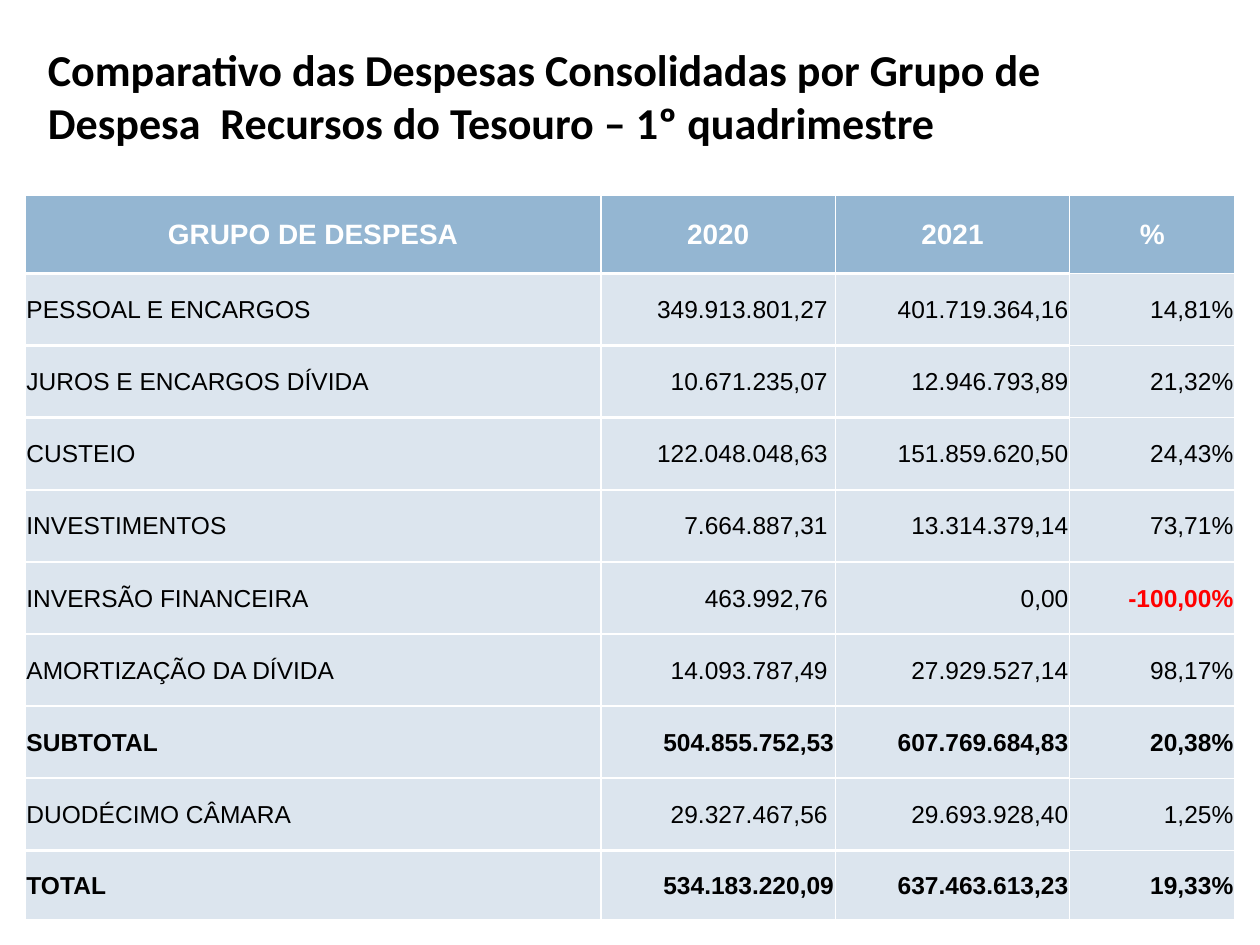
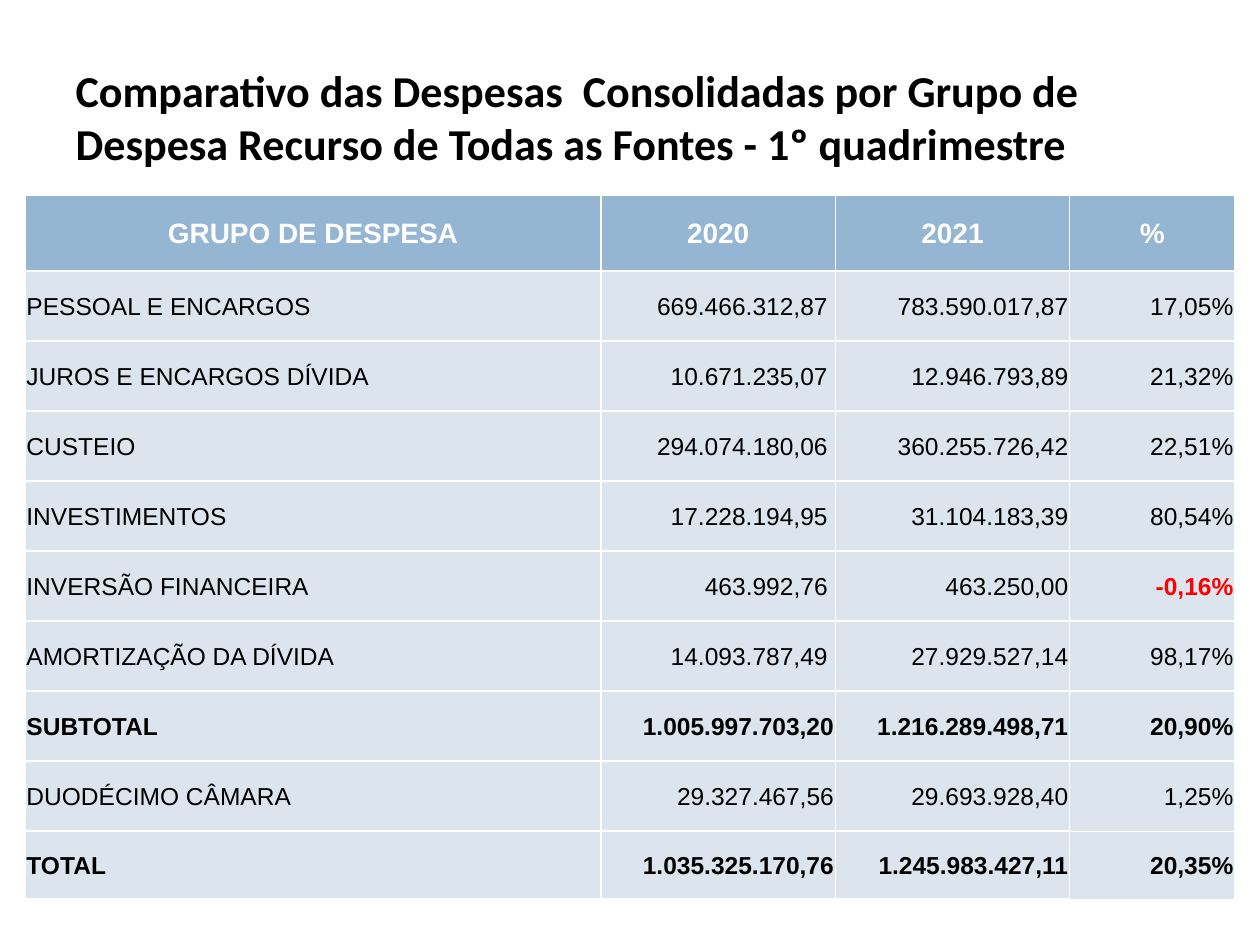
from lxml.etree import SubElement
from pptx import Presentation
from pptx.dml.color import RGBColor
from pptx.enum.text import MSO_ANCHOR, MSO_AUTO_SIZE, PP_ALIGN
from pptx.oxml.ns import qn
from pptx.util import Inches, Pt

BLACK = RGBColor(0x00, 0x00, 0x00)
WHITE = RGBColor(0xFF, 0xFF, 0xFF)
RED = RGBColor(0xFF, 0x00, 0x00)
HEADER_BLUE = RGBColor(0x94, 0xB6, 0xD2)
ROW_BLUE = RGBColor(0xDC, 0xE5, 0xEE)

TITLE_FONT = "Calibri"
TABLE_FONT = "Arial"
HEADINGS = ("GRUPO DE DESPESA", "2020", "2021", "%")
COLUMN_WIDTHS = (4.57, 1.86, 1.86, 1.31)
TOTAL_ROWS = {"SUBTOTAL", "TOTAL"}
CELL_MARGIN = 0.01
INDENTED_MARGIN = 0.06

TREASURY_ROWS = (
    ("PESSOAL E ENCARGOS", "349.913.801,27", "401.719.364,16", "14,81%"),
    ("JUROS E ENCARGOS DÍVIDA", "10.671.235,07", "12.946.793,89", "21,32%"),
    ("CUSTEIO", "122.048.048,63", "151.859.620,50", "24,43%"),
    ("INVESTIMENTOS", "7.664.887,31", "13.314.379,14", "73,71%"),
    ("INVERSÃO FINANCEIRA", "463.992,76", "0,00", "-100,00%"),
    ("AMORTIZAÇÃO DA DÍVIDA", "14.093.787,49", "27.929.527,14", "98,17%"),
    ("SUBTOTAL", "504.855.752,53", "607.769.684,83", "20,38%"),
    ("DUODÉCIMO CÂMARA", "29.327.467,56", "29.693.928,40", "1,25%"),
    ("TOTAL", "534.183.220,09", "637.463.613,23", "19,33%"),
)
ALL_SOURCES_ROWS = (
    ("PESSOAL E ENCARGOS", "669.466.312,87", "783.590.017,87", "17,05%"),
    ("JUROS E ENCARGOS DÍVIDA", "10.671.235,07", "12.946.793,89", "21,32%"),
    ("CUSTEIO", "294.074.180,06", "360.255.726,42", "22,51%"),
    ("INVESTIMENTOS", "17.228.194,95", "31.104.183,39", "80,54%"),
    ("INVERSÃO FINANCEIRA", "463.992,76", "463.250,00", "-0,16%"),
    ("AMORTIZAÇÃO DA DÍVIDA", "14.093.787,49", "27.929.527,14", "98,17%"),
    ("SUBTOTAL", "1.005.997.703,20", "1.216.289.498,71", "20,90%"),
    ("DUODÉCIMO CÂMARA", "29.327.467,56", "29.693.928,40", "1,25%"),
    ("TOTAL", "1.035.325.170,76", "1.245.983.427,11", "20,35%"),
)


def format_text(frame, font_name, size, color, bold, align):
    para = frame.paragraphs[0]
    para.alignment = align
    for span in para.runs:
        span.font.name = font_name
        span.font.size = Pt(size)
        span.font.color.rgb = color
        span.font.bold = bold


def add_title(page, text, box):
    title = page.shapes.title
    title.left, title.top, title.width, title.height = map(Inches, box)
    frame = title.text_frame
    frame.text = text
    frame.word_wrap = True
    frame.auto_size = MSO_AUTO_SIZE.NONE
    frame.vertical_anchor = MSO_ANCHOR.MIDDLE
    format_text(frame, TITLE_FONT, 25.2, BLACK, True, PP_ALIGN.LEFT)


def set_borders(cell, horizontal_width):
    properties = cell._tc.get_or_add_tcPr()
    widths = {"lnL": 1, "lnR": 1, "lnT": horizontal_width, "lnB": horizontal_width}
    for tag, width in widths.items():
        line = SubElement(properties, qn(f"a:{tag}"), w=str(Pt(width)))
        fill = SubElement(line, qn("a:solidFill"))
        SubElement(fill, qn("a:srgbClr"), val=str(WHITE))


def fill_cell(cell, text, fill, size, color, bold, align, right_margin=CELL_MARGIN):
    cell.text_frame.text = text
    cell.vertical_anchor = MSO_ANCHOR.MIDDLE
    cell.margin_left = cell.margin_top = Inches(CELL_MARGIN)
    cell.margin_right = Inches(right_margin)
    cell.margin_bottom = 0
    cell.fill.solid()
    cell.fill.fore_color.rgb = fill
    format_text(cell.text_frame, TABLE_FONT, size, color, bold, align)


def add_expense_table(page, rows, box, header_height, last_height, flush_rows):
    left, top, width, height = map(Inches, box)
    frame = page.shapes.add_table(len(rows) + 1, len(HEADINGS), left, top, width, height)
    table = frame.table
    table.first_row = table.horz_banding = False
    for column, column_width in zip(table.columns, COLUMN_WIDTHS):
        column.width = Inches(column_width)
    body_height = (box[3] - header_height - last_height) / (len(rows) - 1)
    heights = [header_height] + [body_height] * (len(rows) - 1) + [last_height]
    for row, row_height in zip(table.rows, heights):
        row.height = Inches(row_height)

    last_column = len(HEADINGS) - 1
    for cell_index, cell in enumerate(table.iter_cells()):
        set_borders(cell, 1 if cell_index % len(HEADINGS) == last_column else 1.5)
    for index, heading in enumerate(HEADINGS):
        fill_cell(table.cell(0, index), heading, HEADER_BLUE, 16, WHITE, True, PP_ALIGN.CENTER)
    for row_index, values in enumerate(rows, 1):
        group = values[0]
        for index, value in enumerate(values):
            negative = value.startswith("-")
            indented = index == 1 and group not in flush_rows
            fill_cell(
                table.cell(row_index, index), value, ROW_BLUE, 14,
                RED if negative else BLACK,
                negative or group in TOTAL_ROWS,
                PP_ALIGN.RIGHT if index else PP_ALIGN.LEFT,
                INDENTED_MARGIN if indented else CELL_MARGIN,
            )


def add_comparison_page(deck, title, title_box, rows, table_height,
                        header_height, last_height, flush_rows=TOTAL_ROWS):
    page = deck.slides.add_slide(deck.slide_layouts[5])
    add_title(page, title, title_box)
    table_box = (0.2, 1.55, sum(COLUMN_WIDTHS), table_height)
    add_expense_table(page, rows, table_box, header_height, last_height, flush_rows)


def main():
    deck = Presentation()
    deck.slide_width, deck.slide_height = Inches(10), Inches(7.5)
    add_comparison_page(
        deck,
        "Comparativo das Despesas Consolidadas por Grupo de Despesa  "
        "Recursos do Tesouro – 1º quadrimestre",
        (0.28, 0.13, 8.36, 1.25), TREASURY_ROWS, 5.75, 0.62, 0.55,
    )
    add_comparison_page(
        deck,
        "Comparativo das Despesas  Consolidadas por Grupo de Despesa "
        "Recurso de Todas as Fontes - 1º quadrimestre",
        (0.5, 0.3, 9, 1.25), ALL_SOURCES_ROWS, 5.59, 0.6, 0.54,
        TOTAL_ROWS | {"DUODÉCIMO CÂMARA"},
    )
    deck.save("out.pptx")


if __name__ == "__main__":
    main()
